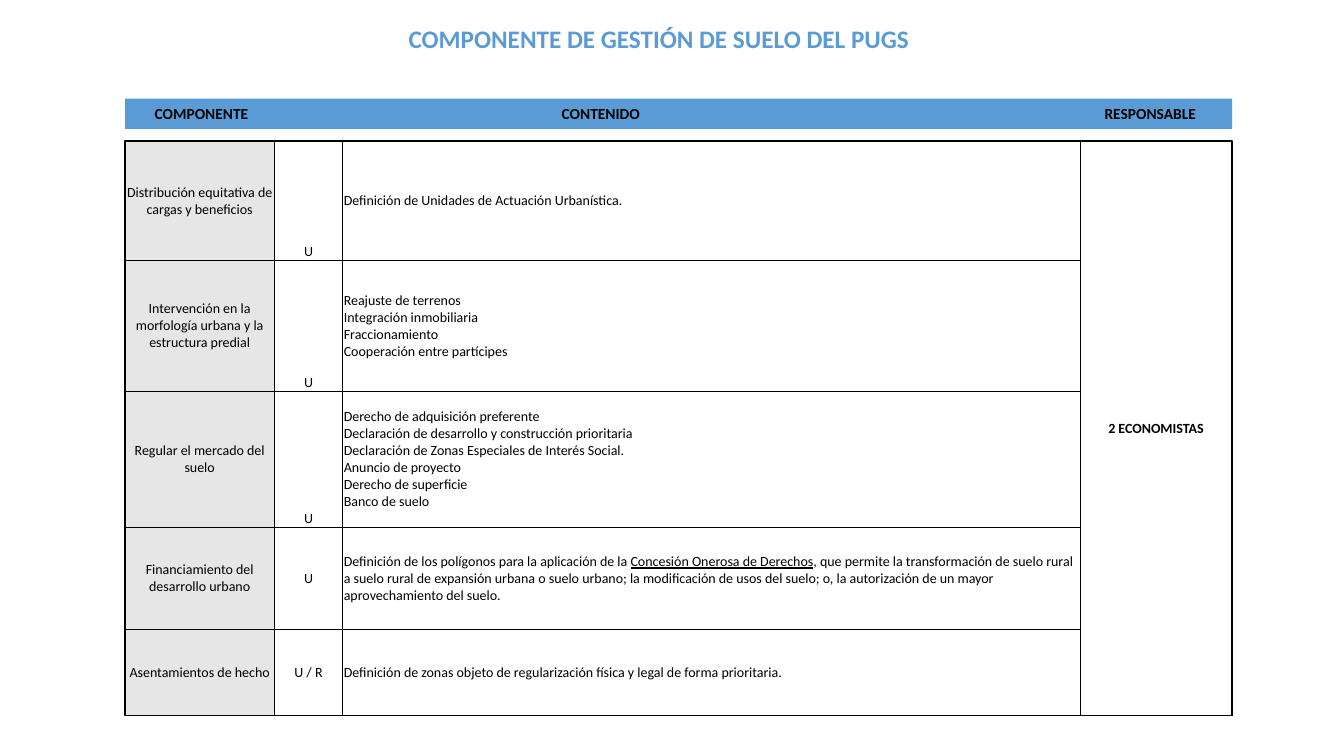
from lxml import etree
from pptx import Presentation, util as u
from pptx.dml.color import RGBColor
from pptx.enum import shapes, text
from pptx.oxml.ns import qn

FONT = "Calibri"
BLUE, GREY, BLACK = "5B9BD5", "E7E6E6", "000000"
LEFT, WIDTH = 1.24, 10.98
COLUMNS = [1.48, 0.68, 7.31, 1.51]
ROWS = [1.18, 1.3, 1.35, 1.01, 0.86]
HEADINGS = {"COMPONENTE": 0.66, "CONTENIDO": 4.62, "RESPONSABLE": 10.07}
UNDERLINED = "Concesión Onerosa de Derechos"
COMPONENTS = [
    ("Distribución equitativa de cargas y beneficios", "U",
     "Definición de Unidades de Actuación Urbanística."),
    ("Intervención en la morfología urbana y la estructura predial", "U",
     "Reajuste de terrenos\nIntegración inmobiliaria\nFraccionamiento\n"
     "Cooperación entre partícipes"),
    ("Regular el mercado del suelo", "U",
     "Derecho de adquisición preferente\n"
     "Declaración de desarrollo y construcción prioritaria\n"
     "Declaración de Zonas Especiales de Interés Social.\n"
     "Anuncio de proyecto\nDerecho de superficie\nBanco de suelo"),
    ("Financiamiento del desarrollo urbano", "U",
     "Definición de los polígonos para la aplicación de la " + UNDERLINED +
     ", que permite la transformación de suelo rural a suelo rural de expansión urbana "
     "o suelo urbano; la modificación de usos del suelo; o, la autorización de un mayor "
     "aprovechamiento del suelo."),
    ("Asentamientos de hecho", "U / R",
     "Definición de zonas objeto de regularización física y legal de forma prioritaria."),
]
RESPONSIBLE = "2 ECONOMISTAS"


def color(hex_value):
    return RGBColor.from_string(hex_value)


def inches(box):
    return [u.Inches(length) for length in box]


def format_runs(paragraph, size, hex_value=BLACK, bold=False):
    for run in paragraph.runs:
        run.font.name, run.font.size, run.font.bold = FONT, u.Pt(size), bold
        run.font.color.rgb = color(hex_value)


def add_rectangle(slide, box, fill=None, line=None):
    rectangle = slide.shapes.add_shape(shapes.MSO_SHAPE.RECTANGLE, *inches(box))
    rectangle.shadow.inherit = False
    if fill:
        rectangle.fill.solid()
        rectangle.fill.fore_color.rgb = color(fill)
    else:
        rectangle.fill.background()
    if line:
        rectangle.line.color.rgb = color(line)
        rectangle.line.width = u.Pt(1)
    else:
        rectangle.line.fill.background()


def place_title(slide, box):
    title = slide.shapes.title
    title.left, title.top, title.width, title.height = inches(box)
    frame = title.text_frame
    frame.text = "COMPONENTE DE GESTIÓN DE SUELO DEL PUGS"
    frame.vertical_anchor = text.MSO_ANCHOR.MIDDLE
    frame.paragraphs[0].alignment = text.PP_ALIGN.CENTER
    format_runs(frame.paragraphs[0], 18, BLUE, True)


def add_header(slide, box):
    """Blue band whose headings are centred on tab stops."""
    add_rectangle(slide, box, fill=BLUE)
    frame = slide.shapes.add_textbox(*inches(box)).text_frame
    frame.word_wrap = True
    headings = frame.paragraphs[0]
    headings.text = "".join("\t" + heading for heading in HEADINGS)
    format_runs(headings, 11, bold=True)
    stops = etree.SubElement(headings._p.get_or_add_pPr(), qn("a:tabLst"))
    for position in HEADINGS.values():
        etree.SubElement(stops, qn("a:tab"), pos=str(u.Inches(position)), algn="ctr")


def set_borders(cell, widths):
    """Draw black borders; widths are points for left, right, top, bottom."""
    properties = cell._tc.get_or_add_tcPr()
    for side, width in zip("LRTB", widths):
        border = etree.SubElement(properties, qn("a:ln" + side), w=str(u.Pt(width)))
        fill = etree.SubElement(border, qn("a:solidFill"))
        etree.SubElement(fill, qn("a:srgbClr"), val=BLACK)


def fill_cell(cell, content, centred, bold=False, bottom=False):
    cell.margin_left = cell.margin_right = cell.margin_top = u.Inches(0.01)
    cell.margin_bottom = 0
    cell.vertical_anchor = text.MSO_ANCHOR.BOTTOM if bottom else text.MSO_ANCHOR.MIDDLE
    paragraph = cell.text_frame.paragraphs[0]
    before, term, after = content.partition(UNDERLINED)
    paragraph.text = before
    if term:
        underlined = paragraph.add_run()
        underlined.text = term
        underlined.font.underline = True
        paragraph.add_run().text = after
    paragraph.alignment = text.PP_ALIGN.CENTER if centred else text.PP_ALIGN.LEFT
    format_runs(paragraph, 10, bold=bold)


def add_components(slide, box):
    left, top, _, height = box
    add_rectangle(slide, (left, top, COLUMNS[0], height), fill=GREY)
    table = slide.shapes.add_table(len(ROWS), len(COLUMNS), *inches(box)).table
    table.first_row = table.horz_banding = False
    for column, width in zip(table.columns, COLUMNS):
        column.width = u.Inches(width)
    for row, row_height in zip(table.rows, ROWS):
        row.height = u.Inches(row_height)
    last = len(COLUMNS) - 1
    for r in range(len(ROWS)):
        for c in range(len(COLUMNS)):
            cell = table.cell(r, c)
            set_borders(cell, (0.5, 1 if c == last else 0.5, 1 if r == 0 else 0.5, 0.5))
            cell.fill.background()
    for r, contents in enumerate(COMPONENTS):
        for c, content in enumerate(contents):
            fill_cell(table.cell(r, c), content, centred=c < 2, bottom=c == 1 and r < 3)
    responsible = table.cell(0, last)
    responsible.merge(table.cell(len(ROWS) - 1, last))
    fill_cell(responsible, RESPONSIBLE, centred=True, bold=True)
    add_rectangle(slide, box, line=BLACK)


def main():
    deck = Presentation()
    deck.slide_width, deck.slide_height = inches((13.33, 7.5))
    slide = deck.slides.add_slide(deck.slide_layouts.get_by_name("Title Only"))
    place_title(slide, (1.54, 0.18, 9.99, 0.4))
    add_header(slide, (LEFT, 0.98, WIDTH, 0.3))
    add_components(slide, (LEFT, 1.4, WIDTH, sum(ROWS)))
    deck.save("out.pptx")


if __name__ == "__main__":
    main()
